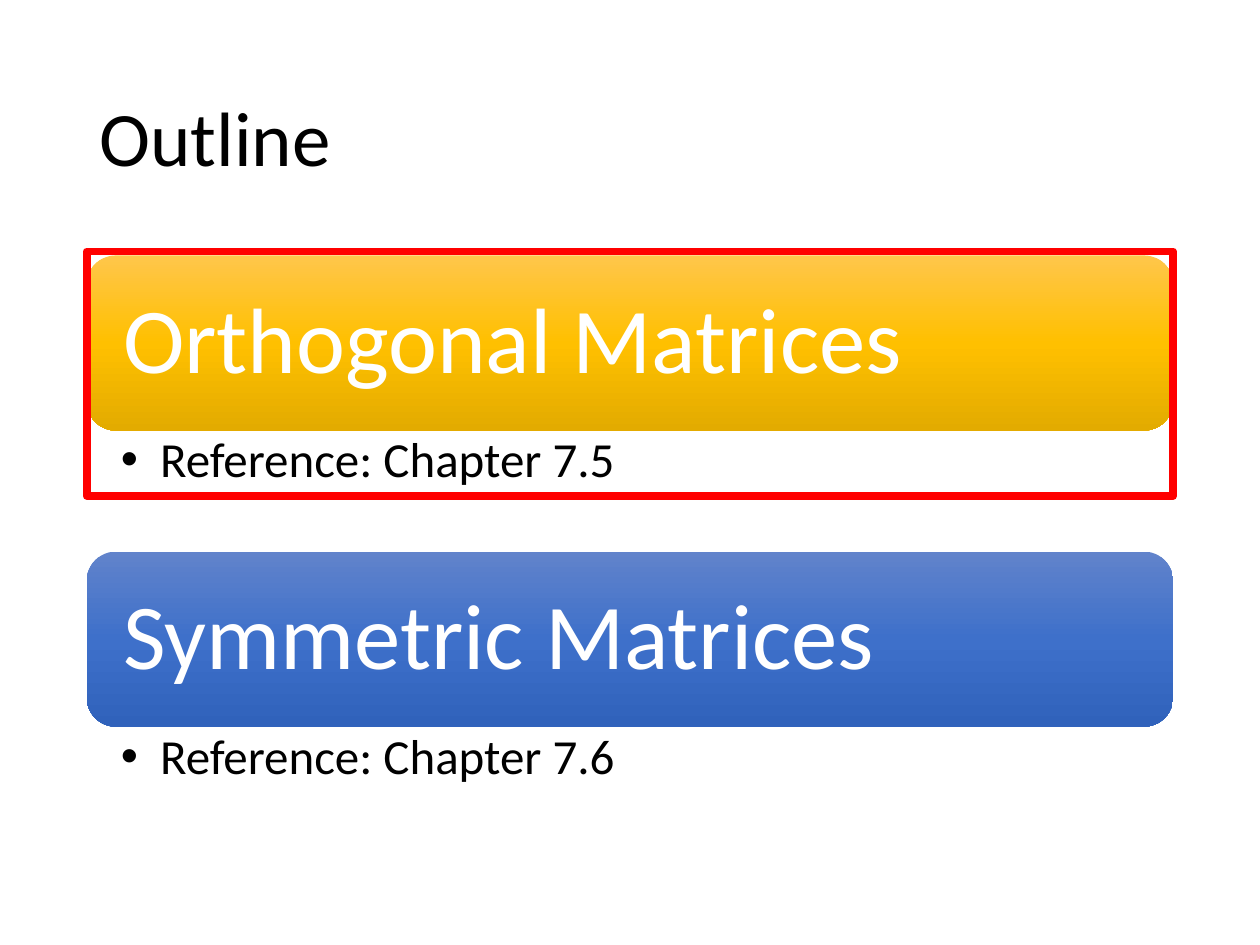
"""Build the outline slide: two matrix topics, the first one framed."""
from copy import deepcopy

from pptx import Presentation
from pptx.dml.color import RGBColor
from pptx.enum.shapes import MSO_SHAPE
from pptx.enum.text import MSO_ANCHOR, PP_ALIGN
from pptx.oxml.ns import qn
from pptx.util import Cm, Pt

BLACK = RGBColor(0x00, 0x00, 0x00)
WHITE = RGBColor(0xFF, 0xFF, 0xFF)
RED = RGBColor(0xFF, 0x00, 0x00)
GOLD = [RGBColor(0xFF, 0xC6, 0x4B), RGBColor(0xFF, 0xC0, 0x00), RGBColor(0xE3, 0xAB, 0x00)]
BLUE = [RGBColor(0x61, 0x83, 0xCB), RGBColor(0x3E, 0x70, 0xCA), RGBColor(0x30, 0x62, 0xBB)]

TITLE = "Outline"
TOPICS = [
    ("Orthogonal Matrices", "Reference: Chapter 7.5", GOLD),
    ("Symmetric Matrices", "Reference: Chapter 7.6", BLUE),
]

LEFT, WIDTH = Cm(1.75), Cm(21.9)
TOPICS_TOP = Cm(5.15)
BANNER_HEIGHT, REFERENCE_HEIGHT = Cm(3.53), Cm(2.44)
BULLET_INDENT = Cm(0.79)


def write(shape, text, size, color, anchor, margins):
    frame = shape.text_frame
    frame.word_wrap = True
    frame.vertical_anchor = anchor
    frame.margin_left, frame.margin_top, frame.margin_right, frame.margin_bottom = margins
    para = frame.paragraphs[0]
    para.text = text
    para.alignment = PP_ALIGN.LEFT
    para.line_spacing = 0.9
    para.font.name = "Calibri"
    para.font.size = Pt(size)
    para.font.color.rgb = color
    return para


def fill_gradient(shape, colors):
    shape.fill.gradient()
    shape.fill.gradient_angle = 270
    first = shape._element.spPr.find(".//" + qn("a:gs"))
    first.addnext(deepcopy(first))
    for stop, color, position in zip(shape.fill.gradient_stops, colors, (0, 0.5, 1)):
        stop.color.rgb = color
        stop.position = position


def add_bullet(para):
    properties = para._p.get_or_add_pPr()
    properties.set("marL", str(BULLET_INDENT))
    properties.set("indent", str(-BULLET_INDENT))
    font = properties.makeelement(qn("a:buFont"), {"typeface": "Arial"})
    bullet = properties.makeelement(qn("a:buChar"), {"char": "•"})
    properties.find(qn("a:defRPr")).addprevious(font)
    font.addnext(bullet)


def add_topic(page, top, heading, reference, colors):
    banner = page.shapes.add_shape(MSO_SHAPE.ROUNDED_RECTANGLE, LEFT, top, WIDTH, BANNER_HEIGHT)
    banner.shadow.inherit = False
    banner.line.fill.background()
    fill_gradient(banner, colors)
    write(banner, heading, 53, WHITE, MSO_ANCHOR.MIDDLE, [Cm(0.56)] * 4)

    box = page.shapes.add_textbox(LEFT, top + BANNER_HEIGHT, WIDTH, REFERENCE_HEIGHT)
    margins = Cm(0.69), Cm(0.1), Cm(0.56), Cm(0.1)
    add_bullet(write(box, reference, 28, BLACK, MSO_ANCHOR.TOP, margins))


def main():
    deck = Presentation()
    deck.slide_width, deck.slide_height = Cm(25.4), Cm(19.05)
    page = deck.slides.add_slide(deck.slide_layouts[5])

    title = page.shapes.title
    title.left, title.top, title.width, title.height = LEFT, Cm(1.01), WIDTH, Cm(3.68)
    margins = Cm(0.25), Cm(0.13), Cm(0.25), Cm(0.13)
    write(title, TITLE, 44, BLACK, MSO_ANCHOR.MIDDLE, margins)

    for index, topic in enumerate(TOPICS):
        top = TOPICS_TOP + index * (BANNER_HEIGHT + REFERENCE_HEIGHT)
        add_topic(page, top, *topic)

    frame = page.shapes.add_shape(MSO_SHAPE.RECTANGLE, LEFT, Cm(5.07), WIDTH, Cm(4.93))
    frame.shadow.inherit = False
    frame.fill.background()
    frame.line.color.rgb = RED
    frame.line.width = Pt(4.5)

    deck.save("out.pptx")


if __name__ == "__main__":
    main()
